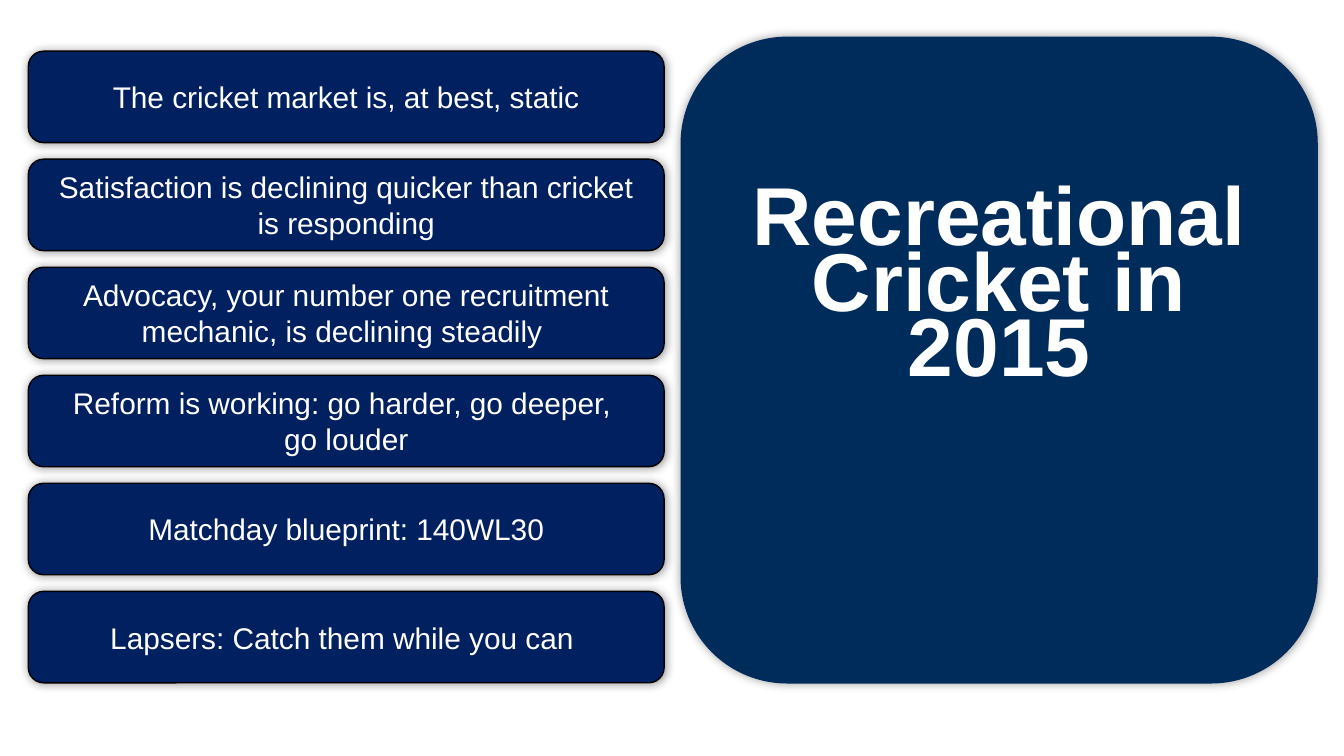
import pptx
import pptx.util
import pptx.dml.color
import pptx.enum.shapes
import pptx.enum.text
import pptx.oxml
import pptx.oxml.ns

Pt = pptx.util.Pt
COLORS = {"panel": "002C5B", "row": "002060", "outline": "000000",
          "shadow": "000000", "text": "FFFFFF"}
FONT = "Arial"
TITLE = "Recreational Cricket in 2015"
POINTS = [
    "The cricket market is, at best, static",
    "Satisfaction is declining quicker than cricket is responding",
    "Advocacy, your number one recruitment mechanic, is declining steadily ",
    "Reform is working: go harder, go deeper, \ngo louder",
    "Matchday blueprint: 140WL30",
    "Lapsers: Catch them while you can ",
]


def rgb(name):
    return pptx.dml.color.RGBColor.from_string(COLORS[name])


def add_glow_shadow(sp, blur=5, alpha=40):
    sp.shadow.inherit = False
    effects = sp._element.spPr.find(pptx.oxml.ns.qn("a:effectLst"))
    effects.append(pptx.oxml.parse_xml(
        f'<a:outerShdw {pptx.oxml.ns.nsdecls("a")} blurRad="{Pt(blur)}" dist="0" '
        f'dir="0" algn="ctr" rotWithShape="0"><a:srgbClr val="{COLORS["shadow"]}">'
        f'<a:alpha val="{alpha * 1000}"/></a:srgbClr></a:outerShdw>'))


def add_card(s, x, y, w, h, fill, line):
    sp = s.shapes.add_shape(pptx.enum.shapes.MSO_SHAPE.ROUNDED_RECTANGLE,
                            Pt(x), Pt(y), Pt(w), Pt(h))
    sp.fill.solid()
    sp.fill.fore_color.rgb = rgb(fill)
    sp.line.color.rgb = rgb(line)
    sp.line.width = Pt(0.75)
    add_glow_shadow(sp)
    return sp


def set_text(sp, text, size, bold=False, spacing=None):
    tf = sp.text_frame
    tf.text = text
    tf.word_wrap = True
    tf.auto_size = pptx.enum.text.MSO_AUTO_SIZE.NONE
    tf.vertical_anchor = pptx.enum.text.MSO_ANCHOR.MIDDLE
    for p in tf.paragraphs:
        p.alignment = pptx.enum.text.PP_ALIGN.CENTER
        if spacing:
            p.line_spacing = Pt(spacing)
        for r in p.runs:
            r.font.name = FONT
            r.font.size = Pt(size)
            r.font.bold = bold
            r.font.color.rgb = rgb("text")


def add_title_panel(s, x, y, w, h):
    add_card(s, x, y, w, h, "panel", "panel")
    title = s.shapes.title
    s.shapes._spTree.append(title._element)
    inset, spacing = 16.6, 35
    title.left, title.top = Pt(x + inset), Pt(y)
    title.width, title.height = Pt(w - 2 * inset), Pt(h - 2 * spacing)
    set_text(title, TITLE, 44, bold=True, spacing=spacing)


def add_point_stack(s, x, y, w, h, row_h=49):
    pitch = (h - row_h) / (len(POINTS) - 1)
    for i, text in enumerate(POINTS):
        sp = add_card(s, x, y + i * pitch, w, row_h, "row", "outline")
        set_text(sp, text, 16)


def main():
    prs = pptx.Presentation()
    prs.slide_width, prs.slide_height = Pt(720), Pt(405)
    s = prs.slides.add_slide(prs.slide_layouts[5])
    add_title_panel(s, 365, 20, 340.6, 345.8)
    add_point_stack(s, 15.2, 27.4, 340.6, 338.4)
    prs.save("out.pptx")


if __name__ == "__main__":
    main()
